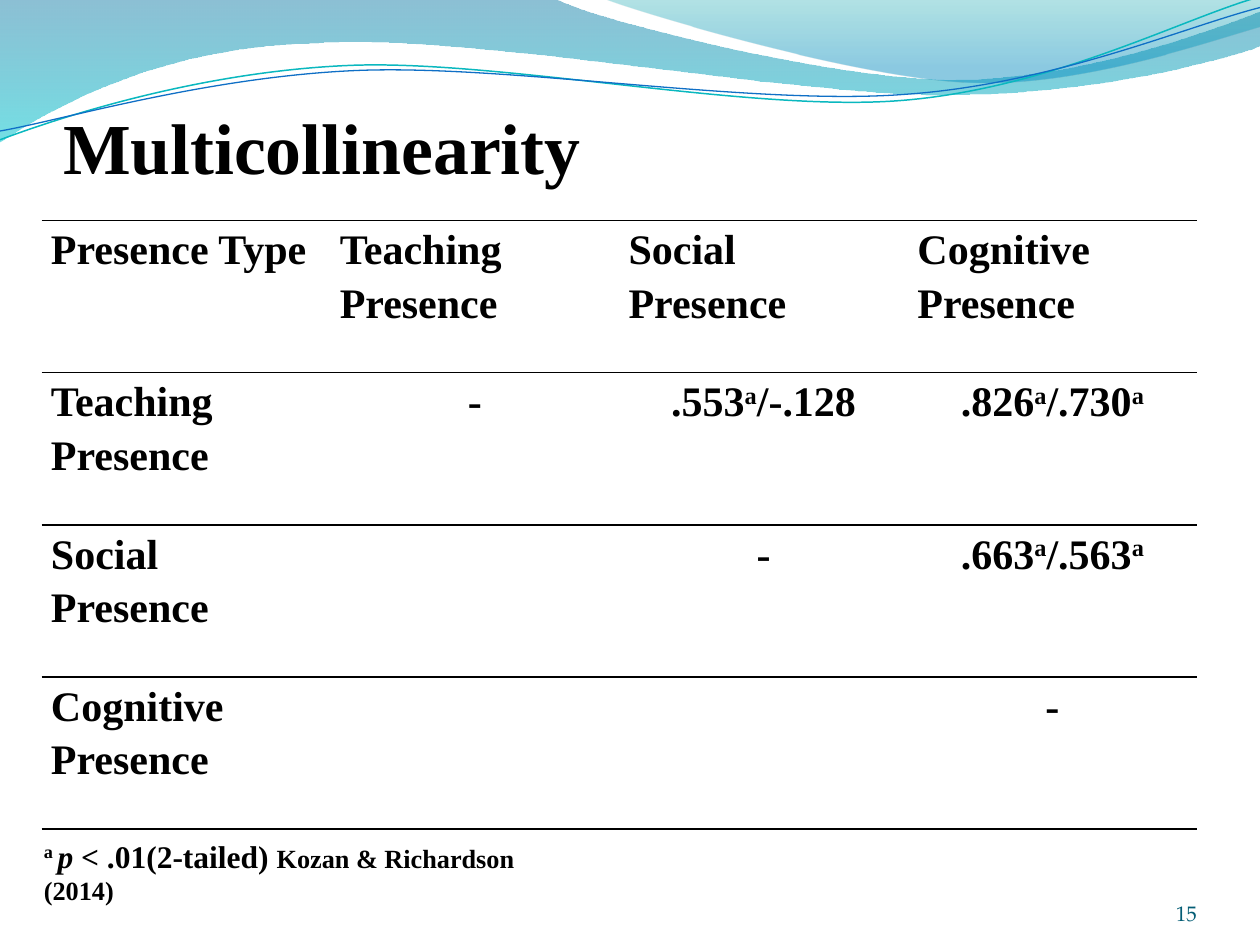
from lxml.etree import SubElement
from pptx import Presentation
from pptx.dml.color import RGBColor
from pptx.enum.text import MSO_ANCHOR as Anchor, MSO_AUTO_SIZE as AutoSize, PP_ALIGN as Align
from pptx.oxml import parse_xml
from pptx.oxml.ns import nsdecls, qn
from pptx.util import Inches, Pt

SERIF = "Times New Roman"
TITLE_ONLY = 5
BLACK_LINE = '<a:solidFill><a:srgbClr val="000000"/></a:solidFill>'
BORDERS = {"lnL": "<a:noFill/>", "lnR": "<a:noFill/>", "lnT": BLACK_LINE, "lnB": BLACK_LINE}


def color(hex_code):
    return RGBColor.from_string(hex_code)


def write(para, text, size=24, font=SERIF, ink="000000", bold=True, italic=False):
    """Add text to a paragraph; parts between ^ marks are superscript."""
    for index, part in enumerate(text.split("^")):
        if not part:
            continue
        span = para.add_run()
        span.text = part
        span.font.size, span.font.name = Pt(size), font
        span.font.bold, span.font.italic = bold, italic
        span.font.color.rgb = color(ink)
        if index % 2:
            span._r.get_or_add_rPr().set("baseline", "30000")


class SlideMaker:
    def __init__(self, deck):
        self.page = deck.slides.add_slide(deck.slide_layouts[TITLE_ONLY])

    def outline(self, start, segments, closed):
        """Draw lines (2 numbers) and cubic curves (6 numbers) from a start."""
        ends = [(Inches(s[-2]), Inches(s[-1])) for s in segments]
        builder = self.page.shapes.build_freeform(*map(Inches, start), scale=1.0)
        builder.add_line_segments(ends, close=closed)
        shape = builder.convert_to_shape()
        shape.shadow.inherit = False
        lines = list(shape.element.iter(qn("a:lnTo")))
        for line, segment in zip(lines, segments):
            if len(segment) == 6:
                self.bend(line, segment, shape.left, shape.top)
        return shape

    def bend(self, line, segment, left, top):
        """Make a line step of an outline into a cubic curve."""
        line.tag = qn("a:cubicBezTo")
        for index in (0, 1):
            point = parse_xml(f'<a:pt {nsdecls("a")}/>')
            point.set("x", str(Inches(segment[2 * index]) - left))
            point.set("y", str(Inches(segment[2 * index + 1]) - top))
            line.insert(index, point)

    def wave(self, start, segments, stops):
        shape = self.outline(start, segments, True)
        shape.fill.gradient()
        shape.fill.gradient_angle = 270
        for stop, (position, tint, _) in zip(shape.fill.gradient_stops, stops):
            stop.position = position
            stop.color.rgb = color(tint)
        for node, (_, _, alpha) in zip(shape.element.iter(qn("a:srgbClr")), stops):
            SubElement(node, qn("a:alpha")).set("val", str(alpha * 1000))
        shape.line.fill.background()

    def ribbon(self, start, segments, tint, width):
        shape = self.outline(start, segments, False)
        shape.fill.background()
        shape.line.color.rgb = color(tint)
        shape.line.width = Pt(width)

    def frame(self, box, anchor, margins):
        frame = box.text_frame
        frame.word_wrap, frame.auto_size = True, AutoSize.NONE
        frame.vertical_anchor = anchor
        (frame.margin_left, frame.margin_top,
         frame.margin_right, frame.margin_bottom) = map(Inches, margins)
        return frame.paragraphs[0]

    def title(self, text, left, top, width, height):
        box = self.page.shapes.title
        box.left, box.top, box.width, box.height = map(Inches, (left, top, width, height))
        para = self.frame(box, Anchor.BOTTOM, (0, 0.05, 0, 0))
        para.alignment = Align.LEFT
        write(para, text, size=41)

    def text(self, place, anchor=Anchor.TOP, margins=(0, 0, 0, 0), align=Align.LEFT):
        box = self.page.shapes.add_textbox(*map(Inches, place))
        para = self.frame(box, anchor, margins)
        para.alignment = align
        return para

    def table(self, rows, left, top, width, height):
        table = self.page.shapes.add_table(
            len(rows), len(rows[0]), *map(Inches, (left, top, width, height))).table
        table.first_row = table.horz_banding = False
        for r, row in enumerate(rows):
            for c, text in enumerate(row):
                self.cell(table.cell(r, c), text, Align.CENTER if r and c else Align.LEFT)

    def cell(self, cell, text, align):
        cell.margin_left = cell.margin_right = Inches(0.075)
        cell.margin_top = cell.margin_bottom = 0
        cell.fill.background()
        for index, (side, paint) in enumerate(BORDERS.items()):
            cell._tc.get_or_add_tcPr().insert(index, parse_xml(
                f'<a:{side} {nsdecls("a")} w="12700">{paint}</a:{side}>'))
        if text:
            para = cell.text_frame.paragraphs[0]
            para.alignment, para.line_spacing = align, 1.15
            write(para, text)


def main():
    deck = Presentation()
    deck.slide_width, deck.slide_height = Inches(10), Inches(7.5)
    maker = SlideMaker(deck)

    # Waves across the top
    maker.wave((0, 0), [
        (4.4, -0.01), (4.76, 0.17, 6.64, 0.63, 7.58, 0.63),
        (8.53, 0.63, 9.58, 0.26, 10, 0.09), (10.01, 0.36),
        (9.83, 0.44, 8.7, 0.76, 7.46, 0.75), (6.22, 0.75, 3.82, 0.28, 2.57, 0.34),
        (1.29, 0.36, 0.46, 0.83, -0.01, 1.13)],
        [(0, "0074A1", 45), (1, "00C6CF", 55)])
    maker.wave((4.79, -0.01), [
        (5.09, 0.11, 6.82, 0.62, 7.69, 0.65), (8.56, 0.69, 9.61, 0.32, 10, 0.21), (10, 0)],
        [(0, "00A1A9", 30), (0.8, "008BBF", 45)])
    maker.ribbon((0, 1.11), [
        (0.48, 0.93, 1.58, 0.57, 2.77, 0.52), (3.95, 0.47, 5.93, 0.89, 7.13, 0.8),
        (8.33, 0.71, 9.38, 0.15, 9.98, -0.02)], "0AB8BF", 0.85)
    maker.ribbon((0, 1.04), [
        (0.47, 0.96, 1.64, 0.61, 2.83, 0.56), (4.03, 0.51, 5.97, 0.84, 7.17, 0.75),
        (8.36, 0.67, 9.41, 0.21, 10, 0.06)], "0F6FC6", 0.75)

    # Title and slide number
    maker.title("Multicollinearity", 0.5, 0.25, 9, 1.25)
    number = maker.text((8.67, 6.95, 0.83, 0.4), Anchor.BOTTOM, align=Align.RIGHT)
    write(number, "15", size=12, font="TeX Gyre Pagella", ink="045D75", bold=False)

    # Footnote
    note = maker.text((0.25, 6.42, 4.53, 0.71), margins=(0.1, 0.22, 0.15, 0))
    write(note, "^a ^", size=18)
    write(note, "p ", size=18, italic=True)
    write(note, "< .01(2-tailed) ", size=18)
    write(note, "Kozan & Richardson (2014)", size=15)

    # Correlation table
    teaching, social, cognitive = (f"{kind} Presence" for kind in
                                   ("Teaching", "Social", "Cognitive"))
    maker.table([
        ["Presence Type", teaching, social, cognitive],
        [teaching, "-", ".553^a^/-.128", ".826^a^/.730^a^"],
        [social, "", "-", ".663^a^/.563^a^"],
        [cognitive, "", "", "-"],
    ], 0.33, 1.75, 9.17, 4.83)

    deck.save("out.pptx")


if __name__ == "__main__":
    main()
